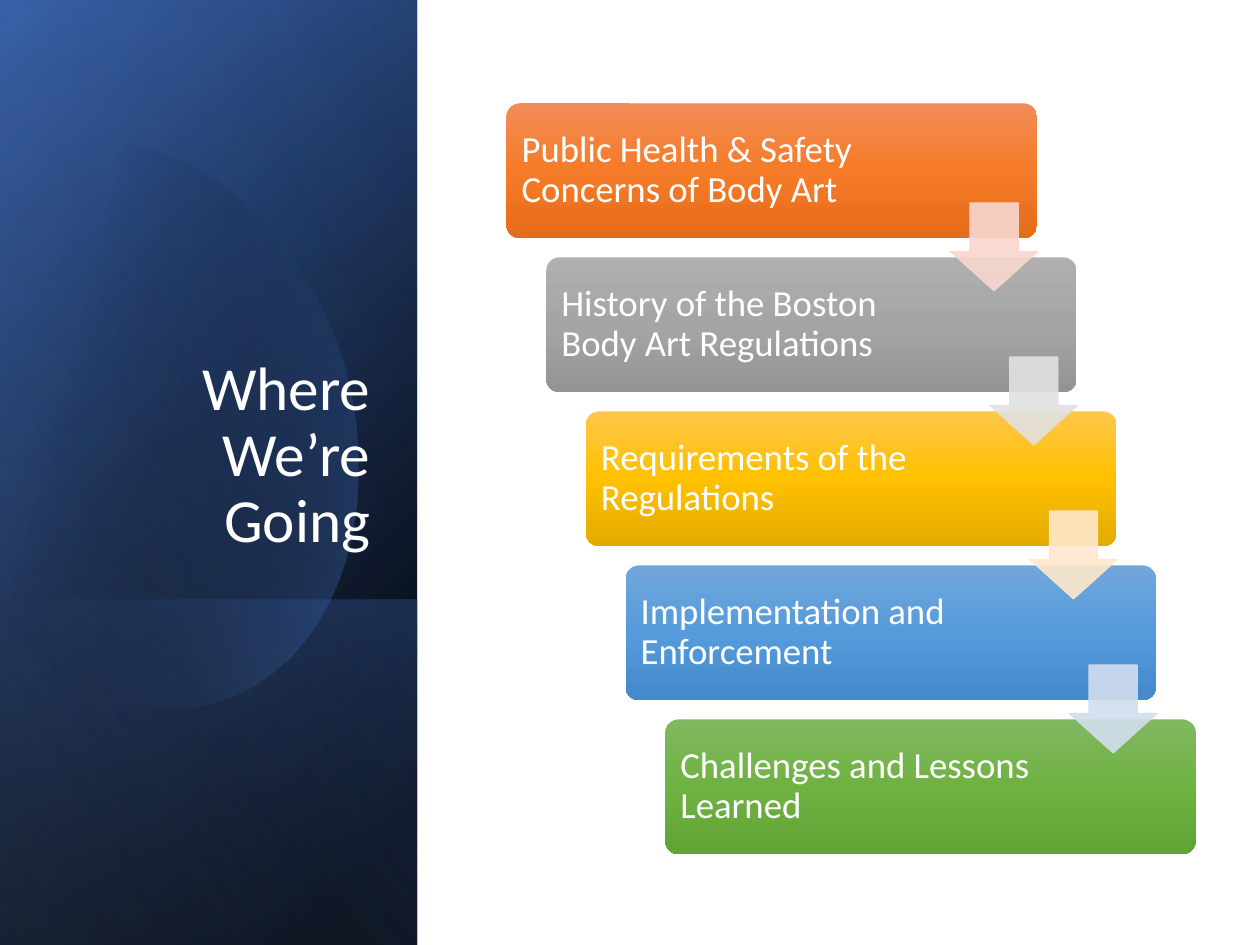
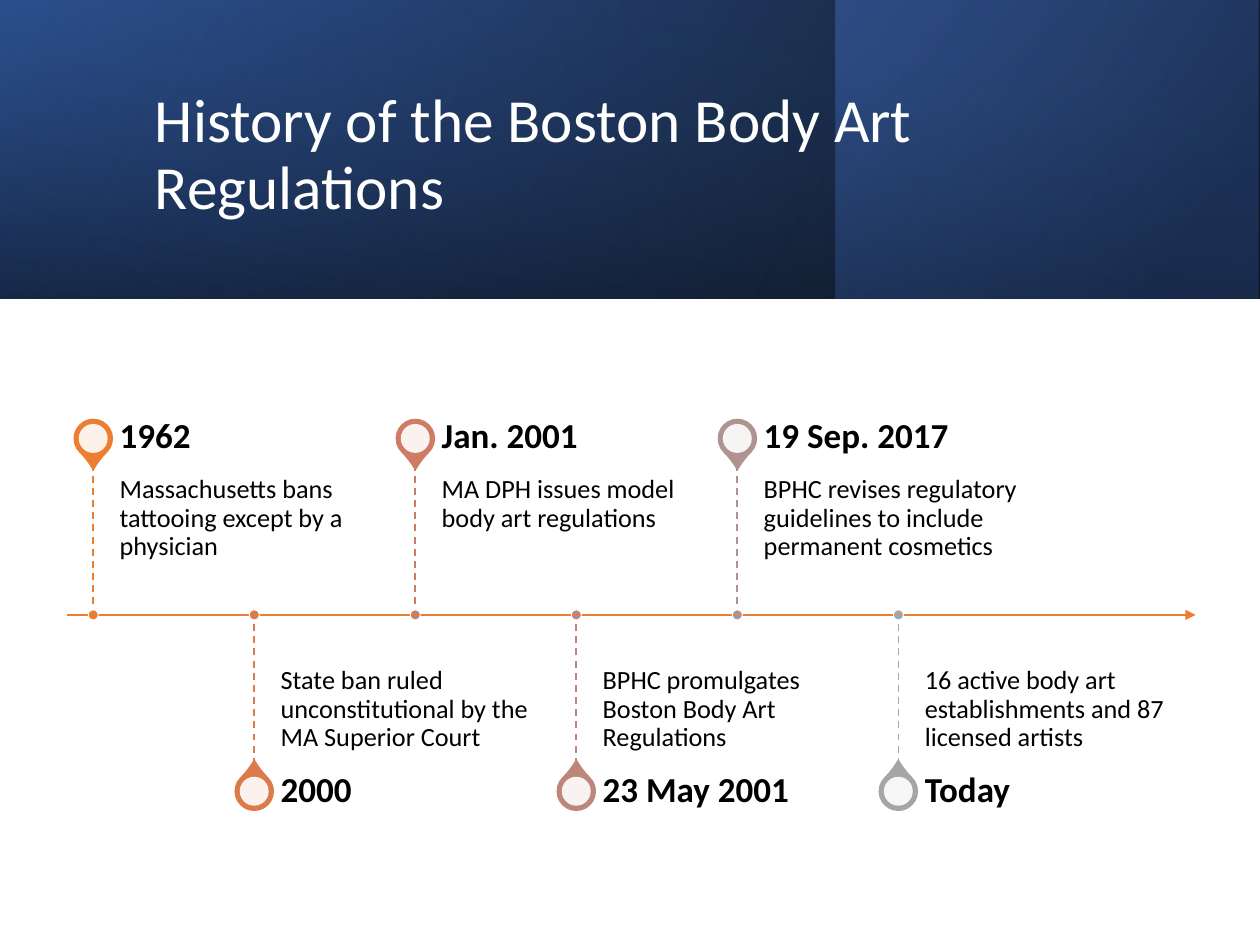
"""Builds the agenda slide and the timeline slide on body art regulations."""
from lxml.etree import SubElement
from pptx import Presentation
from pptx.dml.color import RGBColor as Rgb
from pptx.enum.dml import MSO_LINE as Dash
from pptx.enum.shapes import MSO_CONNECTOR as Link, MSO_SHAPE as Kind
from pptx.enum.text import MSO_ANCHOR as Anchor, MSO_AUTO_SIZE as Fit, PP_ALIGN as Align
from pptx.oxml.ns import qn
from pptx.util import Inches, Pt

FONT = "Calibri"
HUES = {
    "white": "FFFFFF", "black": "000000", "navy": "2F5597", "deep": "203864",
    "blue": "4472C4", "pale": "8FAADC", "orange": "ED7D31",
}
STEPS = [
    ("Public Health & Safety Concerns of Body Art", ("F18C57", "F67B28", "E56C19"), "F8D7CE"),
    ("History of the Boston Body Art Regulations", ("AFAFAF", "A5A5A5", "939393"), "E1E1E1"),
    ("Requirements of the Regulations", ("FFC64B", "FFC000", "E3AB00"), "FFE8CC"),
    ("Implementation and Enforcement", ("71A6DB", "559BDB", "448ACA"), "D2DEEF"),
    ("Challenges and Lessons Learned", ("81B861", "6FB242", "62A336"), None),
]
EVENTS = [
    ("1962", "Massachusetts bans tattooing except by a physician", "ED7D31"),
    ("2000", "State ban ruled unconstitutional by the MA Superior Court", "DC7A4B"),
    ("Jan. 2001", "MA DPH issues model body art regulations", "CC7D64"),
    ("23 May 2001", "BPHC promulgates Boston Body Art Regulations", "BD867B"),
    ("19 Sep. 2017", "BPHC revises regulatory guidelines to include permanent cosmetics", "B09391"),
    ("Today", "16 active body art establishments and 87 licensed artists", "A5A5A5"),
]
LEAF = [
    (0.96, 1.14),
    (1.71, 1.22, 2.44, 1.92, 2.73, 2.9),
    (3.07, 4.12, 2.62, 5.31, 1.71, 5.57),
    (1.14, 5.74, 0.53, 5.5, 0.07, 5),
    (-0.03, 4.88), (-0.25, 1.66), (-0.15, 1.54),
    (0.02, 1.37, 0.22, 1.25, 0.45, 1.18),
    (0.62, 1.13, 0.79, 1.12, 0.96, 1.14),
]


def tone(name):
    """Return the colour for a key of HUES or a hex string."""
    return Rgb.from_string(HUES.get(name, name))


def write(shape, text, size, color="black", bold=False, align=Align.LEFT,
          anchor=Anchor.TOP, inset=(0.1, 0.05, 0.1, 0.05), after=0):
    """Put one formatted paragraph into a shape."""
    frame = shape.text_frame
    frame.word_wrap = True
    frame.auto_size = Fit.NONE
    frame.vertical_anchor = anchor
    (frame.margin_left, frame.margin_top,
     frame.margin_right, frame.margin_bottom) = map(Inches, inset)
    frame.text = text
    para = frame.paragraphs[0]
    para.alignment = align
    para.line_spacing = 0.9
    para.space_before = Pt(0)
    para.space_after = Pt(after)
    font = para.runs[0].font
    font.name, font.size, font.bold = FONT, Pt(size), bold
    font.color.rgb = tone(color)


def label(slide, box, text, size, **look):
    """Add a text box."""
    area = slide.shapes.add_textbox(*map(Inches, box))
    write(area, text, size, after=round(size * 0.35), **look)


def head(slide, box, text, **look):
    """Place the title above the bands."""
    title = slide.shapes.title
    title.left, title.top, title.width, title.height = map(Inches, box)
    write(title, text, 35, color="white", **look)
    slide.shapes._spTree.append(title._element)


def form(slide, kind, box, fill=None, line=None, width=1, alpha=None, turn=0):
    """Add a preset shape with flat colours."""
    shape = slide.shapes.add_shape(kind, *map(Inches, box))
    shape.shadow.inherit = False
    shape.rotation = turn
    if fill:
        shape.fill.solid()
        shape.fill.fore_color.rgb = tone(fill)
    if line:
        shape.line.color.rgb = tone(line)
        shape.line.width = Pt(width)
    else:
        shape.line.fill.background()
    if alpha:
        for color in shape._element.spPr.iter(qn("a:srgbClr")):
            SubElement(color, qn("a:alpha"), val=str(alpha * 1000))
    return shape


def blend(shape, angle, stops):
    """Fill a shape with a gradient of (place, colour, opacity) stops."""
    shape.fill.gradient()
    shape.fill.gradient_angle = (360 - angle) % 360
    chain = shape._element.spPr.find(qn("a:gradFill")).find(qn("a:gsLst"))
    for old in list(chain):
        chain.remove(old)
    for place, name, alpha in stops:
        stop = SubElement(chain, qn("a:gs"), pos=str(place * 1000))
        color = SubElement(stop, qn("a:srgbClr"), val=str(tone(name)))
        if alpha < 100:
            SubElement(color, qn("a:alpha"), val=str(alpha * 1000))


def band(slide, box, turn, angle, *stops):
    """Add a mirrored gradient panel that covers the box once turned."""
    x, y, w, h = box
    if turn in (90, 270):
        x, y, w, h = x + (w - h) / 2, y + (h - w) / 2, h, w
    panel = form(slide, Kind.RECTANGLE, (x, y, w, h), turn=turn)
    panel._element.spPr.find(qn("a:xfrm")).set("flipH", "1")
    blend(panel, angle, stops)


def trace(path, count=16):
    """Turn lines and cubic curves into a list of points."""
    spots = [path[0]]
    for part in path[1:]:
        if len(part) == 2:
            spots.append(part)
            continue
        ends = (spots[-1], part[:2], part[2:4], part[4:])
        for step in range(1, count + 1):
            t = step / count
            parts = ((1 - t) ** 3, 3 * t * (1 - t) ** 2, 3 * t * t * (1 - t), t ** 3)
            spots.append(tuple(sum(k * p[axis] for k, p in zip(parts, ends))
                               for axis in (0, 1)))
    return spots


def leaf(slide):
    """Add the rounded outline on the side panel."""
    spots = [(Inches(x), Inches(y)) for x, y in trace(LEAF)]
    pen = slide.shapes.build_freeform(*spots[0])
    pen.add_line_segments(spots[1:], close=True)
    shape = pen.convert_to_shape()
    shape.shadow.inherit = False
    shape.line.fill.background()
    blend(shape, 14, [(29, "black", 0), (100, "blue", 43)])


def rule(slide, start, end, color, width, dash=None, arrow=False):
    """Add a straight line."""
    line = slide.shapes.add_connector(Link.STRAIGHT, *map(Inches, start + end))
    line.line.color.rgb = tone(color)
    line.line.width = Pt(width)
    if dash:
        line.line.dash_style = dash
    if arrow:
        SubElement(line.line._get_or_add_ln(), qn("a:tailEnd"), type="triangle")
    SubElement(line._element.spPr, qn("a:effectLst"))


def stairs(slide):
    """Add the cascade of steps and the arrows between them."""
    spots = [(4.02 + 1.26 / 4 * i, 0.82 + 4.89 / 4 * i) for i in range(len(STEPS))]
    for i, ((x, y), (text, shades, _)) in enumerate(zip(spots, STEPS)):
        card = form(slide, Kind.ROUNDED_RECTANGLE, (x, y, 4.21, 1.07))
        card.adjustments[0] = 0.1
        blend(card, 90, [(p, c, 100) for p, c in zip((0, 50, 100), shades)])
        label(slide, (x + 0.03, y + 0.03, 3.14 if i else 2.93, 1.01), text, 21,
              color="white", anchor=Anchor.MIDDLE, inset=(0.09,) * 4)
    for (x, y), (_, _, tint) in zip(spots[:-1], STEPS):
        arrow = form(slide, Kind.DOWN_ARROW, (x + 3.52, y + 0.79, 0.7, 0.7),
                     tint, tint, 0.5, alpha=90)
        arrow.adjustments[0], arrow.adjustments[1] = 0.55, 0.45


def disc(slide, x, y, size, fill, **look):
    """Add a circle around a centre."""
    form(slide, Kind.OVAL, (x - size / 2, y - size / 2, size, size), fill, **look)


def event(slide, x, axis, above, date, text, color):
    """Add one pin with its date and text above or below the axis."""
    if above:
        pin, tip, date_y, body_y, turn = 3.48, 3.68, 3.26, 3.68, 135
        side, inset = Anchor.TOP, (0, 0.1, 0.1, 0.16)
    else:
        pin, tip, date_y, body_y, turn = 6.28, 6.07, 6.07, axis, 315
        side, inset = Anchor.BOTTOM, (0, 0.16, 0, 0.1)
    drop = form(slide, Kind.TEAR, (x - 0.15, pin - 0.15, 0.3, 0.3),
                color, color, turn=turn)
    drop.adjustments[0] = 1.15
    disc(slide, x, pin, 0.23, "white", alpha=90)
    label(slide, (x + 0.21, body_y, 2.13, 1.19), text, 15, anchor=side, inset=inset)
    label(slide, (x + 0.21, date_y, 2.13, 0.42), date, 20, bold=True,
          anchor=Anchor.MIDDLE, inset=(0, 0, 0.14, 0))
    rule(slide, (x, tip), (x, axis), color, 1, dash=Dash.DASH)
    disc(slide, x, axis, 0.08, color, line="white", width=0.5)


def agenda(slide):
    """Build the agenda slide."""
    side = (0, 0, 3.31, 7.5)
    band(slide, side, 90, 50, (8, "black", 100), (100, "navy", 100))
    band(slide, side, 90, 30, (0, "black", 0), (99, "blue", 46))
    band(slide, (0, 4.76, 3.31, 2.74), 90, 130, (2, "blue", 29), (100, "black", 30))
    leaf(slide)
    band(slide, side, 90, 120, (0, "black", 0), (99, "pale", 11))
    head(slide, (0.48, 1.84, 2.56, 2.62), "Where We’re Going",
         align=Align.RIGHT, anchor=Anchor.BOTTOM)
    stairs(slide)


def history(slide):
    """Build the timeline slide."""
    top = (0, 0, 10, 2.37)
    band(slide, top, 0, 330, (0, "black", 96), (100, "navy", 100))
    band(slide, (6.63, 0, 3.36, 2.37), 0, 320, (19, "deep", 68), (100, "blue", 48))
    band(slide, top, 270, 350, (23, "navy", 16), (99, "black", 45))
    head(slide, (1.13, 0.38, 7.97, 1.72), "History of the Boston Body Art Regulations",
         anchor=Anchor.MIDDLE)
    axis = 4.88
    rule(slide, (0.53, axis), (9.49, axis), "orange", 1.5, arrow=True)
    for i, entry in enumerate(EVENTS):
        event(slide, 0.74 + 6.39 / 5 * i, axis, i % 2 == 0, *entry)


def main():
    """Build and save the deck."""
    deck = Presentation()
    deck.slide_width, deck.slide_height = Inches(10), Inches(7.5)
    for build in (agenda, history):
        build(deck.slides.add_slide(deck.slide_layouts[5]))
    deck.save("out.pptx")


if __name__ == "__main__":
    main()
